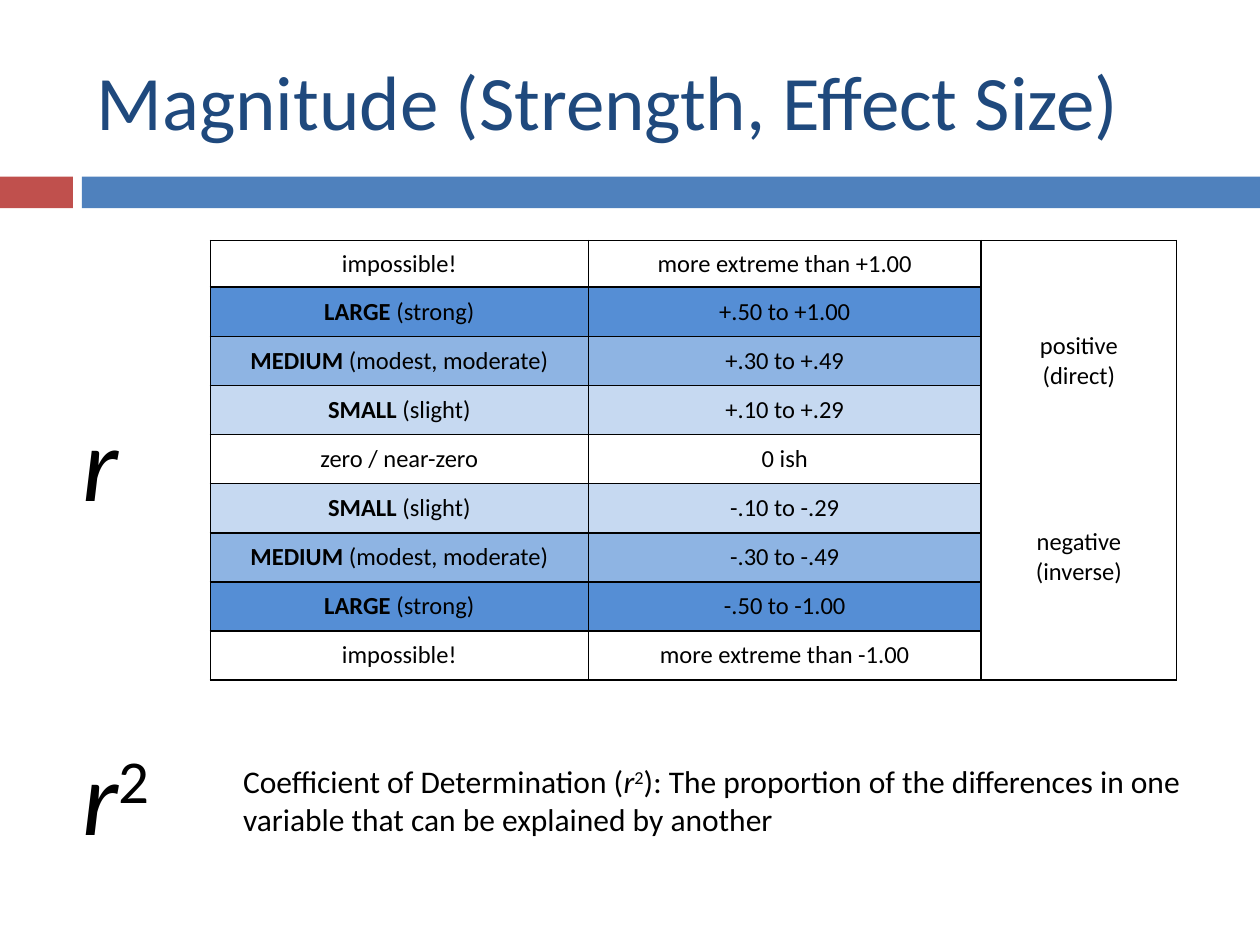
from dataclasses import dataclass

from lxml import etree
from pptx import Presentation
from pptx.dml.color import RGBColor
from pptx.enum.shapes import MSO_SHAPE
from pptx.enum.text import MSO_ANCHOR, PP_ALIGN
from pptx.oxml.ns import qn
from pptx.util import Cm, Pt

RECTANGLE = MSO_SHAPE.RECTANGLE
TOP, MIDDLE = MSO_ANCHOR.TOP, MSO_ANCHOR.MIDDLE
LEFT, CENTER = PP_ALIGN.LEFT, PP_ALIGN.CENTER


@dataclass(frozen=True)
class Theme:
    font: str = "Calibri"
    ink: str = "000000"
    title: str = "1F497D"
    accent: str = "C0504D"
    band: str = "4F81BD"
    blank: str = "FFFFFF"
    large: str = "558ED5"
    medium: str = "8EB4E3"
    small: str = "C6D9F1"
    title_size: int = 44
    symbol_size: int = 60
    body_size: int = 18
    table_size: int = 14
    border: int = 1


class SlideBuilder:
    def __init__(self, slide, theme):
        self.slide = slide
        self.theme = theme

    def bar(self, left, top, width, height, color):
        shape = self.slide.shapes.add_shape(
            RECTANGLE, Cm(left), Cm(top), Cm(width), Cm(height))
        shape.shadow.inherit = False
        shape.fill.solid()
        shape.fill.fore_color.rgb = RGBColor.from_string(color)
        shape.line.fill.background()

    def fill_paragraph(self, paragraph, runs, size, color, align=LEFT):
        """Each run is (text, marks); marks may hold b, i or ^ (superscript)."""
        paragraph.alignment = align
        paragraph.font.name = self.theme.font
        paragraph.font.size = Pt(size)
        paragraph.font.color.rgb = RGBColor.from_string(color)
        for text, marks in runs:
            run = paragraph.add_run()
            run.text = text
            if "b" in marks:
                run.font.bold = True
            if "i" in marks:
                run.font.italic = True
            if "^" in marks:
                run._r.get_or_add_rPr().set("baseline", "30000")

    def text(self, left, top, width, height, runs, size, color=None,
             anchor=TOP, wrap=True):
        box = self.slide.shapes.add_textbox(
            Cm(left), Cm(top), Cm(width), Cm(height))
        frame = box.text_frame
        frame.word_wrap = wrap
        frame.vertical_anchor = anchor
        self.fill_paragraph(frame.paragraphs[0], runs, size,
                            color or self.theme.ink)

    def borders(self, cell, sides):
        properties = cell._tc.get_or_add_tcPr()
        for side in "LRTB":
            line = etree.SubElement(properties, qn(f"a:ln{side}"),
                                    w=str(Pt(self.theme.border)))
            if side in sides:
                fill = etree.SubElement(line, qn("a:solidFill"))
                etree.SubElement(fill, qn("a:srgbClr"), val=self.theme.ink)
            else:
                etree.SubElement(line, qn("a:noFill"))

    def cell(self, cell, lines, color, sides="LRTB"):
        self.borders(cell, sides)
        cell.fill.solid()
        cell.fill.fore_color.rgb = RGBColor.from_string(color)
        cell.vertical_anchor = MIDDLE
        cell.margin_left = cell.margin_right = Cm(0.18)
        cell.margin_top = cell.margin_bottom = 0
        frame = cell.text_frame
        for index, runs in enumerate(lines):
            paragraph = frame.add_paragraph() if index else frame.paragraphs[0]
            self.fill_paragraph(paragraph, runs, self.theme.table_size,
                                self.theme.ink, CENTER)

    def table(self, left, top, widths, heights):
        table = self.slide.shapes.add_table(
            len(heights), len(widths), Cm(left), Cm(top),
            Cm(sum(widths)), Cm(sum(heights))).table
        table.first_row = table.horz_banding = False
        for column, width in zip(table.columns, widths):
            column.width = Cm(width)
        for row, height in zip(table.rows, heights):
            row.height = Cm(height)
        return table


def main():
    theme = Theme()
    deck = Presentation()
    deck.slide_width, deck.slide_height = Cm(25.4), Cm(19.05)
    builder = SlideBuilder(
        deck.slides.add_slide(deck.slide_layouts[6]), theme)

    # Header
    builder.bar(0, 3.56, 1.47, 0.64, theme.accent)
    builder.bar(1.65, 3.56, 23.75, 0.64, theme.band)
    builder.text(1.7, 0.64, 22.66, 2.74,
                 [("Magnitude (Strength, Effect Size)", "")],
                 theme.title_size, theme.title, MIDDLE)

    # Strength labels and ranges of r
    strengths = {
        "impossible": ("", "impossible!", theme.blank),
        "large": ("LARGE", " (strong)", theme.large),
        "medium": ("MEDIUM", " (modest, moderate)", theme.medium),
        "small": ("SMALL", " (slight)", theme.small),
        "zero": ("", "zero / near-zero", theme.blank),
    }
    ranges = [
        ("impossible", "more extreme than +1.00"),
        ("large", "+.50 to +1.00"),
        ("medium", "+.30 to +.49"),
        ("small", "+.10 to +.29"),
        ("zero", "0 ish"),
        ("small", "-.10 to -.29"),
        ("medium", "-.30 to -.49"),
        ("large", "-.50 to -1.00"),
        ("impossible", "more extreme than -1.00"),
    ]
    directions = {1: ("positive", "(direct)"), 5: ("negative", "(inverse)")}
    last = len(ranges) - 1
    magnitudes = builder.table(4.24, 4.85, [7.62, 7.92, 3.94],
                               [0.94] + [0.99] * last)
    for row, (strength, interval) in enumerate(ranges):
        name, detail, color = strengths[strength]
        label = [(name, "b"), (detail, "")] if name else [(detail, "")]
        builder.cell(magnitudes.cell(row, 0), [label], color)
        builder.cell(magnitudes.cell(row, 1), [[(interval, "")]], color)
        sides = "LR" + ("T" if row == 0 else "") + ("B" if row == last else "")
        direction = [[(line, "")] for line in directions.get(row, ())]
        builder.cell(magnitudes.cell(row, 2), direction, theme.blank, sides)
    for row in directions:
        magnitudes.cell(row, 2).merge(magnitudes.cell(row + 2, 2))

    # Coefficient of determination
    r_squared = [("r", "i"), ("2", "^")]
    builder.text(4.65, 15.24, 19.69, 2.57,
                 [("Coefficient of Determination (", ""), *r_squared,
                  ("): The proportion of the differences in one variable "
                   "that can be explained by another", "")],
                 theme.body_size)

    # Symbols
    builder.text(1.42, 7.87, 1.22, 2.82, [("r", "i")],
                 theme.symbol_size, wrap=False)
    builder.text(1.42, 14.6, 2.01, 2.82, r_squared,
                 theme.symbol_size, wrap=False)

    deck.save("out.pptx")


if __name__ == "__main__":
    main()
